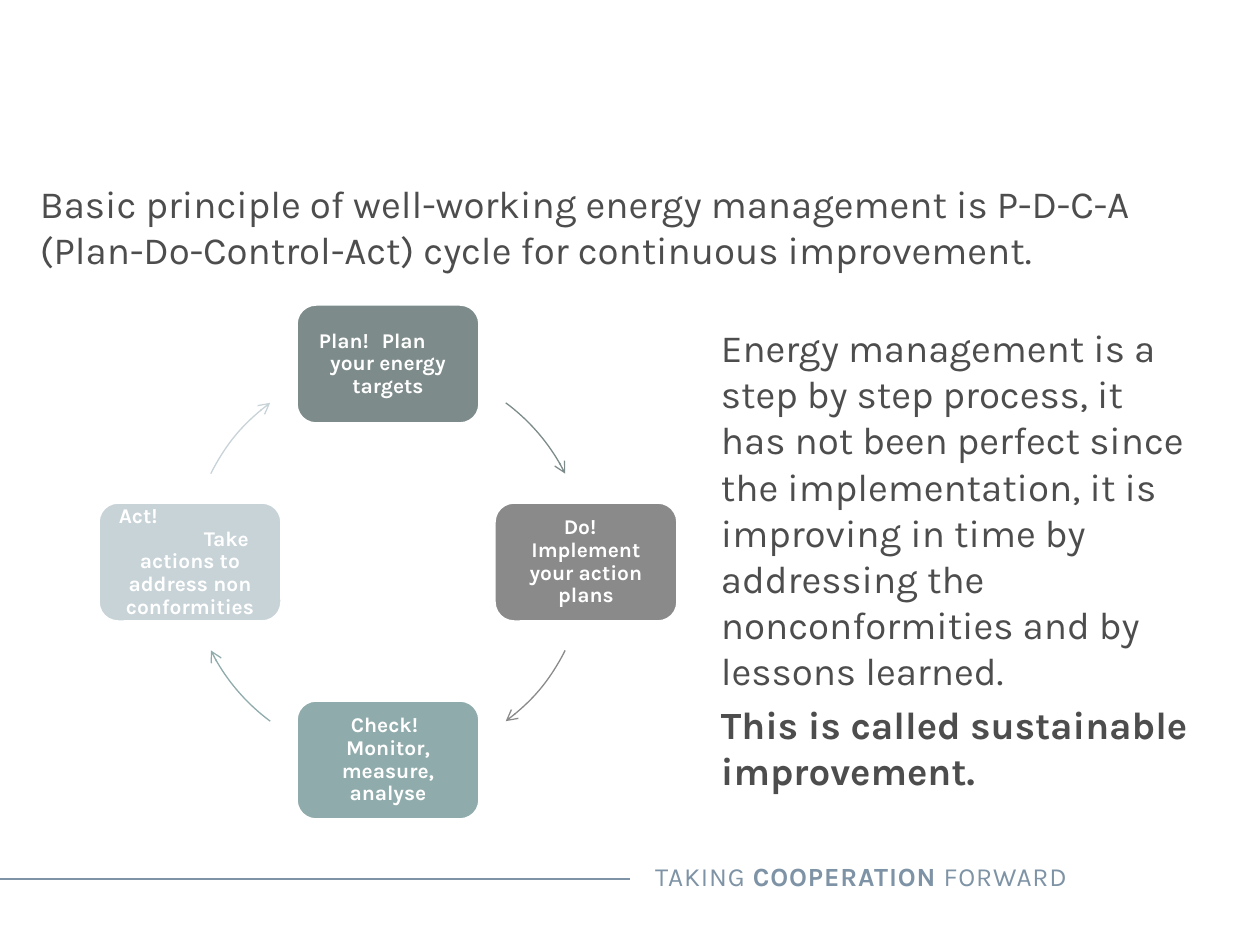
import math

from lxml import etree
from pptx import Presentation
from pptx.dml.color import RGBColor
from pptx.enum.shapes import MSO_CONNECTOR, MSO_SHAPE
from pptx.enum.text import MSO_ANCHOR, PP_ALIGN
from pptx.oxml.ns import qn
from pptx.util import Emu, Pt

PX = 914400 / 126
FONT = "Karla"
LEFT, CENTER, RIGHT = PP_ALIGN.LEFT, PP_ALIGN.CENTER, PP_ALIGN.RIGHT
MIDDLE = MSO_ANCHOR.MIDDLE
ROUNDED, ARC = MSO_SHAPE.ROUNDED_RECTANGLE, MSO_SHAPE.ARC
STRAIGHT = MSO_CONNECTOR.STRAIGHT
COLORS = {
    "text": "4D4D4E",
    "footer": "7E93A5",
    "white": "FFFFFF",
    "plan": "7D8B8A",
    "do": "8A8A8A",
    "check": "90ABAB",
    "act": "C8D3D8",
}

# Clockwise from the top: colour, then paragraphs of (text, indent, tab);
# a paragraph without an indent is centred.
STEPS = [
    ("plan", [("Plan!\tPlan", 5, 113), ("your energy targets", None, None)]),
    ("do", [("Do!", 52, None), ("Implement your action plans", None, None)]),
    ("check", [("Check!", 37, None), ("Monitor, measure, analyse", None, None)]),
    ("act", [("Act!", 3, None), ("Take", 88, None),
             ("actions to address non conformities", None, None)]),
]


def px(n):
    return Emu(round(n * PX))


def rgb(name):
    return RGBColor.from_string(COLORS[name])


def add_text(tf, text, size=22, color="text", bold=False, align=LEFT, before=0,
             line=None, indent=0, tab=None, spacing=None):
    """Add a paragraph; text is a string or a list of (string, bold) runs."""
    p = tf.paragraphs[0]
    if p.runs:
        p = tf.add_paragraph()
    p.alignment = align
    p.space_before = Pt(before)
    if line:
        p.line_spacing = line
    pPr = p._p.get_or_add_pPr()
    if indent:
        pPr.set("marL", str(px(indent)))
        pPr.set("indent", "0")
    if tab:
        tabs = etree.SubElement(pPr, qn("a:tabLst"))
        etree.SubElement(tabs, qn("a:tab"), pos=str(px(tab)), algn="l")
    for part, is_bold in [(text, bold)] if isinstance(text, str) else text:
        r = p.add_run()
        r.text = part
        r.font.name = FONT
        r.font.size = Pt(size)
        r.font.bold = is_bold
        r.font.color.rgb = rgb(color)
        if spacing:
            r._r.get_or_add_rPr().set("spc", str(round(spacing * 100)))


def set_margins(tf, x, y):
    tf.word_wrap = True
    tf.margin_left = tf.margin_right = px(x)
    tf.margin_top = tf.margin_bottom = px(y)


def add_box(s, x, y, w, h, margin_x=0, margin_y=0):
    tf = s.shapes.add_textbox(px(x), px(y), px(w), px(h)).text_frame
    set_margins(tf, margin_x, margin_y)
    return tf


def intro(s, x, y, w, h):
    add_text(add_box(s, x, y, w, h),
             "Basic principle of well-working energy management is P-D-C-A "
             "(Plan-Do-Control-Act) cycle for continuous improvement.")


def explanation(s, x, y, w, h):
    tf = add_box(s, x, y, w, h, 10, 5)
    add_text(tf, "Energy management is a step by step process, it has not been "
                 "perfect since the implementation, it is improving in time by "
                 "addressing the nonconformities and by lessons learned.")
    add_text(tf, "This is called sustainable improvement.", bold=True, before=4.4)


def step_card(s, x, y, w, h, color, paragraphs):
    sp = s.shapes.add_shape(ROUNDED, px(x), px(y), px(w), px(h))
    sp.shadow.inherit = False
    sp.fill.solid()
    sp.fill.fore_color.rgb = rgb(color)
    sp.line.color.rgb = rgb("white")
    sp.line.width = Pt(2)
    tf = sp.text_frame
    tf.vertical_anchor = MIDDLE
    set_margins(tf, 12, 12)
    for text, indent, tab in paragraphs:
        add_text(tf, text, size=12, color="white", bold=True, line=0.9,
                 align=CENTER if indent is None else LEFT,
                 indent=indent or 0, tab=tab)


def arc_arrow(s, cx, cy, radius, start, end, color):
    """Draw a clockwise arc between two angles in degrees, 0 pointing right."""
    sp = s.shapes.add_shape(ARC, px(cx - radius), px(cy - radius),
                            px(2 * radius), px(2 * radius))
    sp.shadow.inherit = False
    sp.fill.background()
    sp.line.color.rgb = rgb(color)
    sp.line.width = Pt(0.75)
    for i, angle in enumerate((start, end)):
        sp.adjustments[i] = angle % 360 * 0.6
    etree.SubElement(sp.line._get_or_add_ln(), qn("a:tailEnd"), type="arrow")


def pdca_cycle(s, x, y, w, h):
    card_w, card_h = 184, 120
    cx, cy = x + w / 2, y + h / 2
    radius = (h - card_h) / 2
    half_sweep = 13.5
    for i, (color, paragraphs) in enumerate(STEPS):
        angle = math.radians(90 * i - 90)
        step_card(s, cx + radius * math.cos(angle) - card_w / 2,
                  cy + radius * math.sin(angle) - card_h / 2,
                  card_w, card_h, color, paragraphs)
        # Arrows sit 40 degrees above or below the horizontal axis.
        middle = (-40, 40, 140, 220)[i]
        arc_arrow(s, cx, cy, radius, middle - half_sweep, middle + half_sweep, color)


def footer(s, x, y, w, h):
    rule = s.shapes.add_connector(STRAIGHT, px(x), px(y + 25), px(x + 630), px(y + 25))
    rule.line.color.rgb = rgb("footer")
    rule.line.width = Pt(0.75)
    etree.SubElement(rule._element.spPr, qn("a:effectLst"))
    tf = add_box(s, x + 489, y, w - 489, h, 13, 6)
    add_text(tf, [("TAKING ", False), ("COOPERATION", True), (" FORWARD", False)],
             size=15, color="footer", align=RIGHT, spacing=0.5)


def main():
    prs = Presentation()
    prs.slide_width, prs.slide_height = px(1260), px(945)
    s = prs.slides.add_slide(prs.slide_layouts[6])
    footer(s, 0, 854, 1080, 44)
    intro(s, 40, 180, 1180, 100)
    pdca_cycle(s, 98, 304, 580, 516)
    explanation(s, 711, 319, 491, 486)
    prs.save("out.pptx")


if __name__ == "__main__":
    main()
